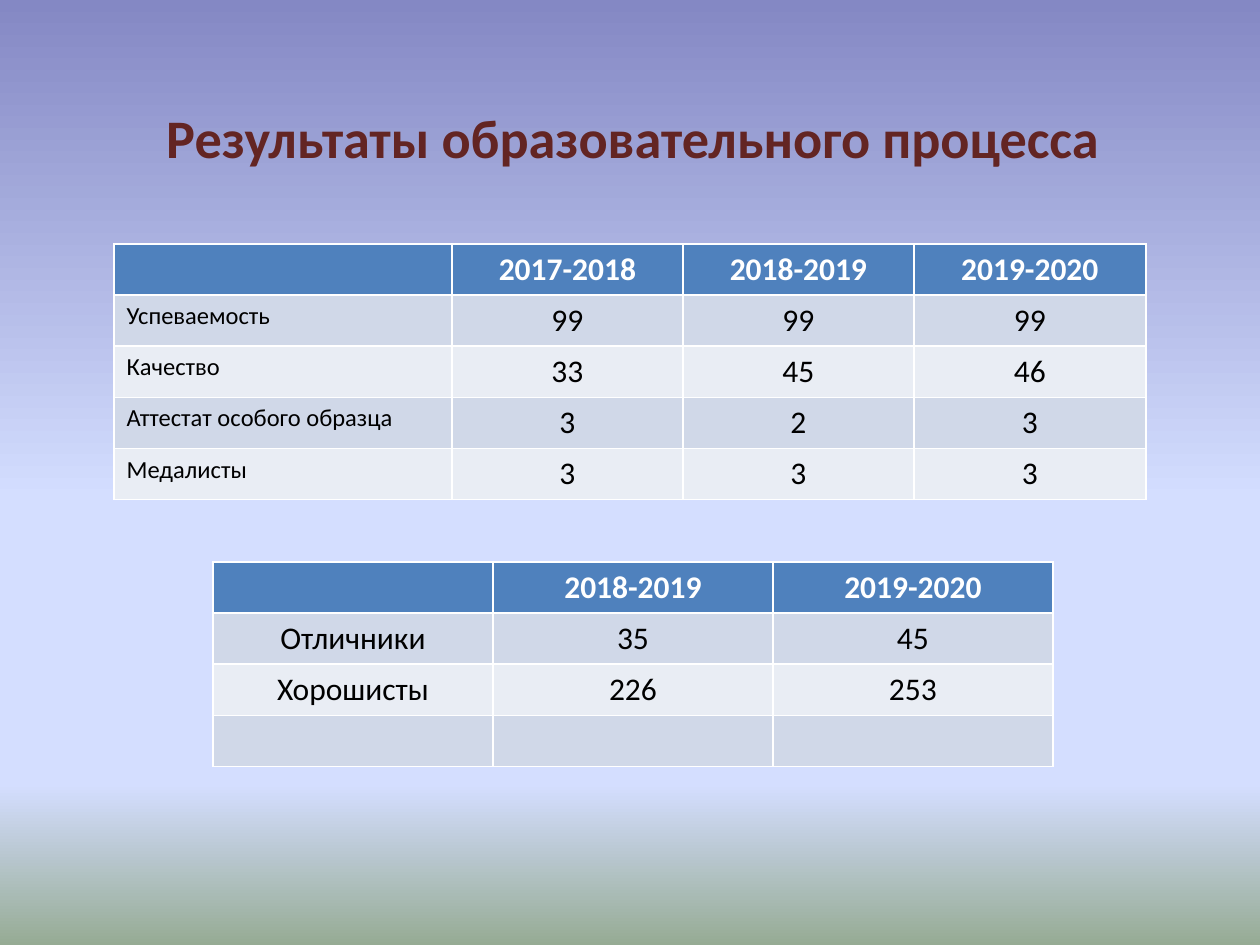
from dataclasses import dataclass

from lxml import etree
from pptx import Presentation
from pptx.dml.color import RGBColor
from pptx.enum import text
from pptx.oxml import ns
from pptx.util import Emu, Pt

EMU_PER_PX = 914400 // 126


@dataclass(frozen=True)
class Theme:
    font: str = "Calibri"
    title: str = "632523"
    header_text: str = "FFFFFF"
    body_text: str = "000000"
    header_fill: str = "4F81BD"
    bands: tuple = ("D0D8E8", "E9EDF4")
    background: tuple = ((0, "8488C4"), (53, "D4DEFF"), (83, "D4DEFF"), (100, "96AB94"))
    title_size: int = 31
    cell_size: int = 18
    label_size: int = 14


THEME = Theme()


def px(n):
    return Emu(n * EMU_PER_PX)


def add_run(p, content, size, color, bold=False):
    r = p.add_run()
    r.text = content
    r.font.name = THEME.font
    r.font.size = Pt(size)
    r.font.bold = bold
    r.font.color.rgb = RGBColor.from_string(color)


def set_background(s):
    """Vertical gradient with the theme's stops."""
    fill = s.background.fill
    fill.gradient()
    fill.gradient_angle = 270
    stops = s.element.find(".//" + ns.qn("a:gsLst"))
    for stop in list(stops):
        stops.remove(stop)
    for percent, color in THEME.background:
        stop = etree.SubElement(stops, ns.qn("a:gs"), pos=str(percent * 1000))
        etree.SubElement(stop, ns.qn("a:srgbClr"), val=color)


def set_title(s, content, left, top, width, height):
    sp = s.shapes.title
    sp.left, sp.top, sp.width, sp.height = map(px, (left, top, width, height))
    tf = sp.text_frame
    tf.word_wrap = True
    tf.vertical_anchor = text.MSO_ANCHOR.MIDDLE
    tf.margin_top, tf.margin_right = px(30), px(30)
    p = tf.paragraphs[0]
    p.alignment = text.PP_ALIGN.CENTER
    add_run(p, content, THEME.title_size, THEME.title, bold=True)


def fill_cell(cell, content, row, is_label):
    """Header row in white on blue, other rows in alternating bands."""
    header = row == 0
    cell.fill.solid()
    color = THEME.header_fill if header else THEME.bands[(row - 1) % 2]
    cell.fill.fore_color.rgb = RGBColor.from_string(color)
    if not content:
        return
    p = cell.text_frame.paragraphs[0]
    if is_label:
        add_run(p, content, THEME.label_size, THEME.body_text)
        return
    p.alignment = text.PP_ALIGN.CENTER
    if not header:
        cell.vertical_anchor = text.MSO_ANCHOR.MIDDLE
    color = THEME.header_text if header else THEME.body_text
    add_run(p, content, THEME.cell_size, color, bold=header)


def add_table(s, rows, left, top, widths, row_height, small_labels=False):
    frame = s.shapes.add_table(len(rows), len(widths), px(left), px(top),
                               px(sum(widths)), px(row_height * len(rows)))
    table = frame.table
    for column, width in zip(table.columns, widths):
        column.width = px(width)
    for i, row in enumerate(rows):
        table.rows[i].height = px(row_height)
        for j, content in enumerate(row):
            is_label = small_labels and i > 0 and j == 0
            fill_cell(table.cell(i, j), content, i, is_label)


def main():
    prs = Presentation()
    prs.slide_width, prs.slide_height = px(1260), px(945)
    s = prs.slides.add_slide(prs.slide_layouts[5])
    set_background(s)
    set_title(s, "Результаты образовательного процесса", 74, 66, 1134, 118)

    # Results by school year
    add_table(s, [
        ("", "2017-2018", "2018-2019", "2019-2020"),
        ("Успеваемость", "99", "99", "99"),
        ("Качество", "33", "45", "46"),
        ("Аттестат особого образца", "3", "2", "3"),
        ("Медалисты", "3", "3", "3"),
    ], 114, 244, (338, 231, 231, 232), 51, small_labels=True)

    # Pupils with top and good marks
    add_table(s, [
        ("", "2018-2019", "2019-2020"),
        ("Отличники", "35", "45"),
        ("Хорошисты", "226", "253"),
        ("", "", ""),
    ], 213, 562, (280, 280, 280), 51)

    prs.save("out.pptx")


if __name__ == "__main__":
    main()
